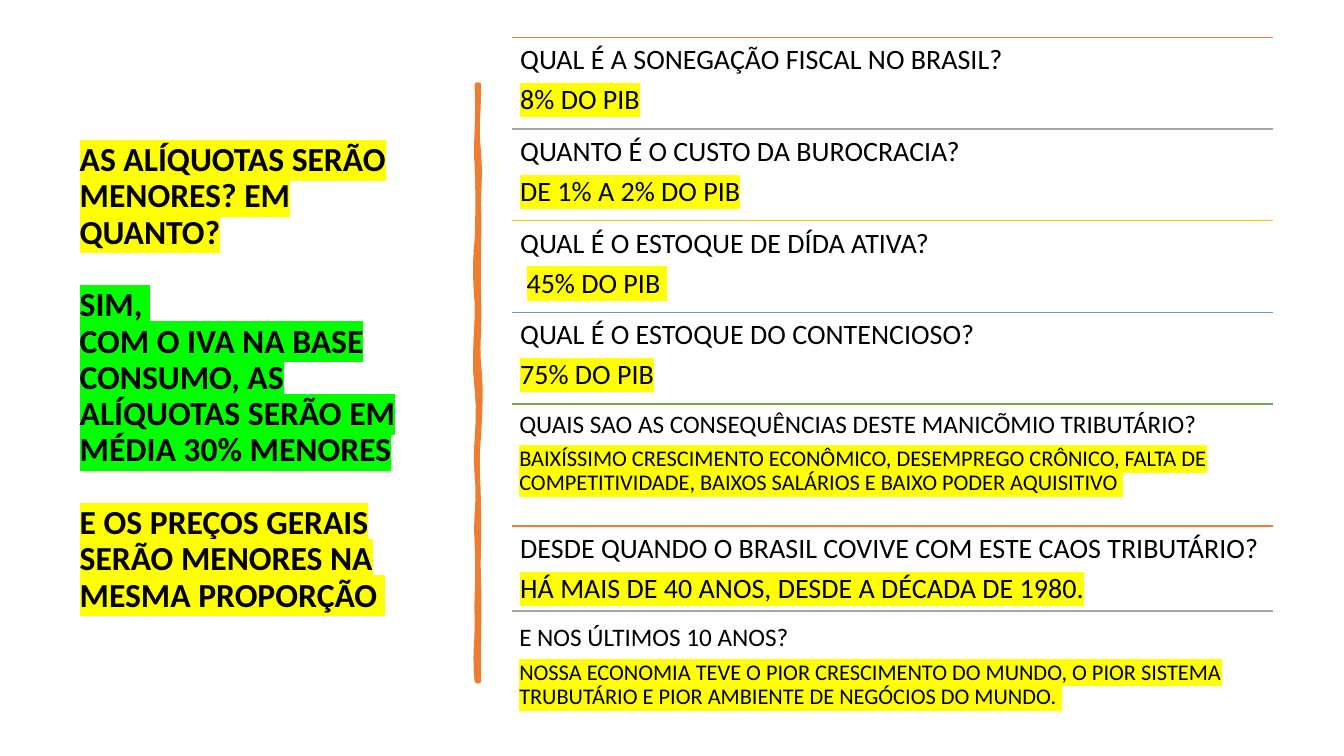
"""Builds a slide of questions and answers on the tax burden in Brazil."""
from lxml import etree
from pptx import Presentation
from pptx.dml.color import RGBColor
from pptx.enum.shapes import MSO_CONNECTOR
from pptx.enum.text import MSO_ANCHOR, MSO_AUTO_SIZE, PP_ALIGN
from pptx.oxml.ns import qn
from pptx.util import Inches, Pt

COLORS = {
    "black": "000000", "yellow": "FFFF00", "lime": "00FF00", "orange": "ED7D31",
    "gray": "A5A5A5", "gold": "FFC000", "blue": "599BD5", "green": "70AD47",
}
FONT = "Calibri"

TITLE = [
    ("AS ALÍQUOTAS SERÃO MENORES? EM QUANTO?", "yellow", 0),
    ("SIM, ", "lime", 26),
    ("COM O IVA NA BASE CONSUMO, AS ALÍQUOTAS SERÃO EM MÉDIA 30% MENORES", "lime", 0),
    ("E OS PREÇOS GERAIS SERÃO MENORES NA MESMA PROPORÇÃO ", "yellow", 26),
]

LARGE = {"question": 20, "answer": 20, "gap": 7, "inset": 0.08}
SMALL = {"question": 18, "answer": 16, "gap": 6.3, "inset": 0.07}
ROWS = [
    ("QUAL É A SONEGAÇÃO FISCAL NO BRASIL?", "8% DO PIB", "orange", LARGE, 0.91, 0),
    ("QUANTO É O CUSTO DA BUROCRACIA?", "DE 1% A 2% DO PIB", "gray", LARGE, 0.91, 0),
    ("QUAL É O ESTOQUE DE DÍDA ATIVA?", " 45% DO PIB ", "gold", LARGE, 0.91, 0),
    ("QUAL É O ESTOQUE DO CONTENCIOSO?", "75% DO PIB", "blue", LARGE, 0.91, 0),
    ("QUAIS SAO AS CONSEQUÊNCIAS DESTE MANICÕMIO TRIBUTÁRIO?",
     "BAIXÍSSIMO CRESCIMENTO ECONÔMICO, DESEMPREGO CRÔNICO, FALTA DE "
     "COMPETITIVIDADE, BAIXOS SALÁRIOS E BAIXO PODER AQUISITIVO ",
     "green", SMALL, 1.21, 0),
    ("DESDE QUANDO O BRASIL COVIVE COM ESTE CAOS TRIBUTÁRIO?",
     "HÁ MAIS DE 40 ANOS, DESDE A DÉCADA DE 1980.", "orange", LARGE, 0.91, 0),
    ("E NOS ÚLTIMOS 10 ANOS?",
     "NOSSA ECONOMIA TEVE O PIOR CRESCIMENTO DO MUNDO, O PIOR SISTEMA "
     "TRUBUTÁRIO E PIOR AMBIENTE DE NEGÓCIOS DO MUNDO. ",
     "gray", SMALL, 0.91, 0.07),
]
ROWS_LEFT, ROWS_TOP, ROWS_WIDTH = 5.08, 0.37, 7.55

BRUSH_START = (4.75, 0.84)
BRUSH_CURVES = [
    (4.75, 1.15, 4.72, 1.25, 4.75, 1.52), (4.77, 1.79, 4.74, 1.97, 4.75, 2.08),
    (4.76, 2.2, 4.74, 2.55, 4.75, 2.94), (4.76, 3.33, 4.73, 3.43, 4.75, 3.62),
    (4.77, 3.81, 4.77, 3.97, 4.75, 4.3), (4.72, 4.63, 4.75, 4.74, 4.75, 5.16),
    (4.75, 5.57, 4.74, 5.53, 4.75, 5.78), (4.76, 6.03, 4.74, 6.47, 4.75, 6.76),
    (4.74, 6.75, 4.73, 6.75, 4.73, 6.76), (4.7, 6.49, 4.74, 6.32, 4.73, 6.13),
    (4.72, 5.95, 4.75, 5.69, 4.73, 5.39), (4.71, 5.1, 4.76, 5, 4.73, 4.71),
    (4.7, 4.42, 4.77, 4.2, 4.73, 3.86), (4.69, 3.51, 4.74, 3.25, 4.73, 3),
    (4.71, 2.75, 4.71, 2.59, 4.73, 2.38), (4.74, 2.16, 4.74, 1.85, 4.73, 1.64),
    (4.71, 1.43, 4.75, 1.21, 4.73, 0.84), (4.74, 0.84, 4.74, 0.84, 4.75, 0.84),
]
CURVE_STEPS = 6


def color(name):
    return RGBColor.from_string(COLORS[name])


def style(para, size, gap=0, bold=False):
    para.font.name = FONT
    para.font.size = Pt(size)
    para.font.bold = bold
    para.font.color.rgb = color("black")
    para.alignment = PP_ALIGN.LEFT
    para.line_spacing = 0.9
    para.space_before = Pt(gap)


def add_span(para, text, highlight=None):
    span = para.add_run()
    span.text = text
    if highlight:
        mark = etree.SubElement(span.font._element, qn("a:highlight"))
        etree.SubElement(mark, qn("a:srgbClr"), val=COLORS[highlight])


def add_paragraph(frame, index):
    return frame.add_paragraph() if index else frame.paragraphs[0]


def add_title(page):
    box = page.shapes.title
    box.left, box.top = Inches(0.69), Inches(0.7)
    box.width, box.height = Inches(3.74), Inches(6.11)
    frame = box.text_frame
    frame.word_wrap = True
    frame.auto_size = MSO_AUTO_SIZE.NONE
    frame.vertical_anchor = MSO_ANCHOR.MIDDLE
    for index, (text, highlight, gap) in enumerate(TITLE):
        para = add_paragraph(frame, index)
        style(para, 24, gap, bold=True)
        add_span(para, text, highlight)


def curve_points(start, curve):
    xs, ys = (start[0], *curve[::2]), (start[1], *curve[1::2])
    for step in range(1, CURVE_STEPS + 1):
        t = step / CURVE_STEPS
        weights = ((1 - t) ** 3, 3 * t * (1 - t) ** 2, 3 * t * t * (1 - t), t ** 3)
        yield tuple(Inches(sum(w * v for w, v in zip(weights, axis))) for axis in (xs, ys))


def add_brush(page):
    points, start = [], BRUSH_START
    for curve in BRUSH_CURVES:
        points.extend(curve_points(start, curve))
        start = curve[-2:]
    builder = page.shapes.build_freeform(*(Inches(v) for v in BRUSH_START))
    builder.add_line_segments(points, close=True)
    brush = builder.convert_to_shape()
    brush.shadow.inherit = False
    brush.fill.solid()
    brush.fill.fore_color.rgb = color("orange")
    brush.line.color.rgb = color("orange")
    brush.line.width = Pt(3.25)
    etree.SubElement(brush.line._get_or_add_ln(), qn("a:round"))


def add_rule(page, top, name):
    rule = page.shapes.add_connector(
        MSO_CONNECTOR.STRAIGHT, Inches(ROWS_LEFT), Inches(top),
        Inches(ROWS_LEFT + ROWS_WIDTH), Inches(top))
    rule.line.color.rgb = color(name)
    rule.line.width = Pt(1)
    etree.SubElement(rule._element.spPr, qn("a:effectLst"))


def add_row(page, top, height, question, answer, sizes):
    box = page.shapes.add_textbox(
        Inches(ROWS_LEFT), Inches(top), Inches(ROWS_WIDTH), Inches(height))
    frame = box.text_frame
    frame.word_wrap = True
    frame.margin_left = frame.margin_right = Inches(sizes["inset"])
    frame.margin_top = frame.margin_bottom = Inches(sizes["inset"])
    para = add_paragraph(frame, 0)
    style(para, sizes["question"])
    add_span(para, question)
    para = add_paragraph(frame, 1)
    style(para, sizes["answer"], sizes["gap"])
    if answer.startswith(" "):
        add_span(para, " ")
    add_span(para, answer.lstrip(), "yellow")


def main():
    deck = Presentation()
    deck.slide_width, deck.slide_height = Inches(13.33), Inches(7.5)
    page = deck.slides.add_slide(deck.slide_layouts[5])
    add_title(page)
    add_brush(page)
    top = ROWS_TOP
    for question, answer, rule_color, sizes, height, lift in ROWS:
        add_rule(page, top - lift, rule_color)
        add_row(page, top, height, question, answer, sizes)
        top += height
    deck.save("out.pptx")


if __name__ == "__main__":
    main()
